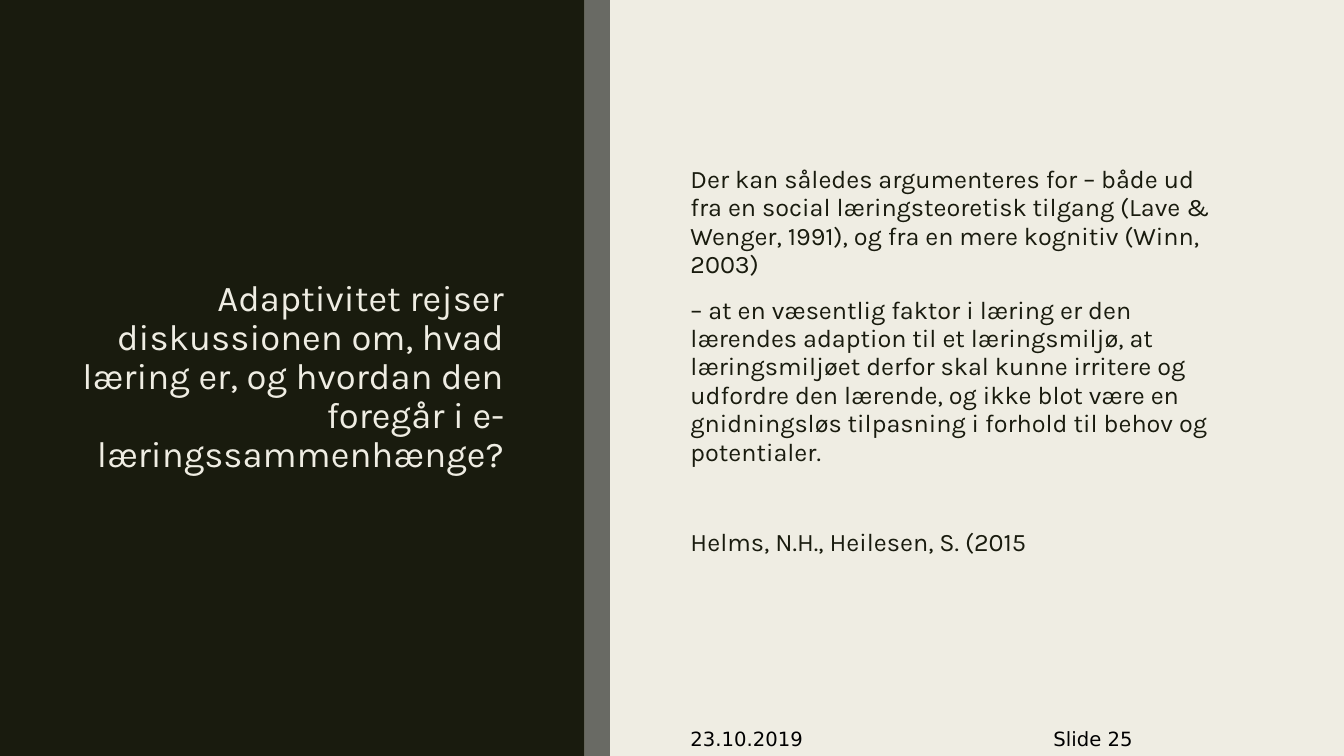
from pptx import Presentation
from pptx.dml.color import RGBColor
from pptx.enum import shapes, text
from pptx.util import Inches, Pt

COLORS = {"dark": "191B0E", "light": "EFEDE3", "grey": "696A64", "black": "000000"}
WIDTH, HEIGHT = 13.33, 7.5
PANEL_WIDTH, STRIP_WIDTH = 5.8, 0.25
MARGIN_TOP = 0.87
CONTENT_HEIGHT = HEIGHT - 2 * MARGIN_TOP
BODY_LEFT, BODY_WIDTH = 6.75, 5.35
FOOTER_HEIGHT = 0.44
NUMBER_WIDTH = 1.75

TITLE = ["Adaptivitet rejser diskussionen om, hvad læring er, og hvordan den foregår i e-læringssammenhænge?"]
BODY = [
    "Der kan således argumenteres for – både ud fra en social læringsteoretisk tilgang (Lave & Wenger, 1991), og fra en mere kognitiv (Winn, 2003)",
    "– at en væsentlig faktor i læring er den lærendes adaption til et læringsmiljø, at læringsmiljøet derfor skal kunne irritere og udfordre den lærende, og ikke blot være en gnidningsløs tilpasning i forhold til behov og potentialer.",
    "Helms, N.H., Heilesen, S. (2015",
]
BODY_GAPS = [0, 10, 42]
FOOTERS = [
    ("23.10.2019", BODY_LEFT, 1.34),
    ("Slide 25", BODY_LEFT + BODY_WIDTH - NUMBER_WIDTH, NUMBER_WIDTH),
]


def color(name):
    return RGBColor.from_string(COLORS[name])


def add_band(slide, left, width, fill):
    shape = slide.shapes.add_shape(
        shapes.MSO_SHAPE.RECTANGLE, Inches(left), 0, Inches(width), Inches(HEIGHT))
    shape.shadow.inherit = False
    shape.fill.solid()
    shape.fill.fore_color.rgb = color(fill)
    shape.line.fill.background()


def add_text(slide, box, lines, font, size, fill, spacing,
             align=text.PP_ALIGN.LEFT, gaps=(0,), after=0, bottom=0.05):
    frame = slide.shapes.add_textbox(*map(Inches, box)).text_frame
    frame.word_wrap = True
    frame.vertical_anchor = text.MSO_ANCHOR.MIDDLE
    frame.margin_bottom = Inches(bottom)
    frame.text = "\n".join(lines)
    for paragraph, gap in zip(frame.paragraphs, gaps):
        paragraph.alignment = align
        paragraph.line_spacing = spacing
        paragraph.space_before = Pt(gap)
        paragraph.space_after = Pt(after)
        paragraph.font.name = font
        paragraph.font.size = Pt(size)
        paragraph.font.color.rgb = color(fill)


def main():
    presentation = Presentation()
    presentation.slide_width = Inches(WIDTH)
    presentation.slide_height = Inches(HEIGHT)
    slide = presentation.slides.add_slide(presentation.slide_layouts[6])
    slide.background.fill.solid()
    slide.background.fill.fore_color.rgb = color("light")

    add_band(slide, 0, PANEL_WIDTH, "dark")
    add_band(slide, PANEL_WIDTH, STRIP_WIDTH, "grey")
    add_text(slide, (0.7, MARGIN_TOP, 4.4, CONTENT_HEIGHT), TITLE,
             "Karla", 26, "light", 0.89, align=text.PP_ALIGN.RIGHT)
    add_text(slide, (BODY_LEFT, MARGIN_TOP, BODY_WIDTH, CONTENT_HEIGHT), BODY,
             "Karla", 18, "dark", 0.94, gaps=BODY_GAPS, after=2, bottom=0.38)
    for label, left, width in FOOTERS:
        add_text(slide, (left, HEIGHT - FOOTER_HEIGHT, width, FOOTER_HEIGHT), [label],
                 "DejaVu Sans", 14, "black", Pt(24), after=6)
    presentation.save("out.pptx")


if __name__ == "__main__":
    main()
